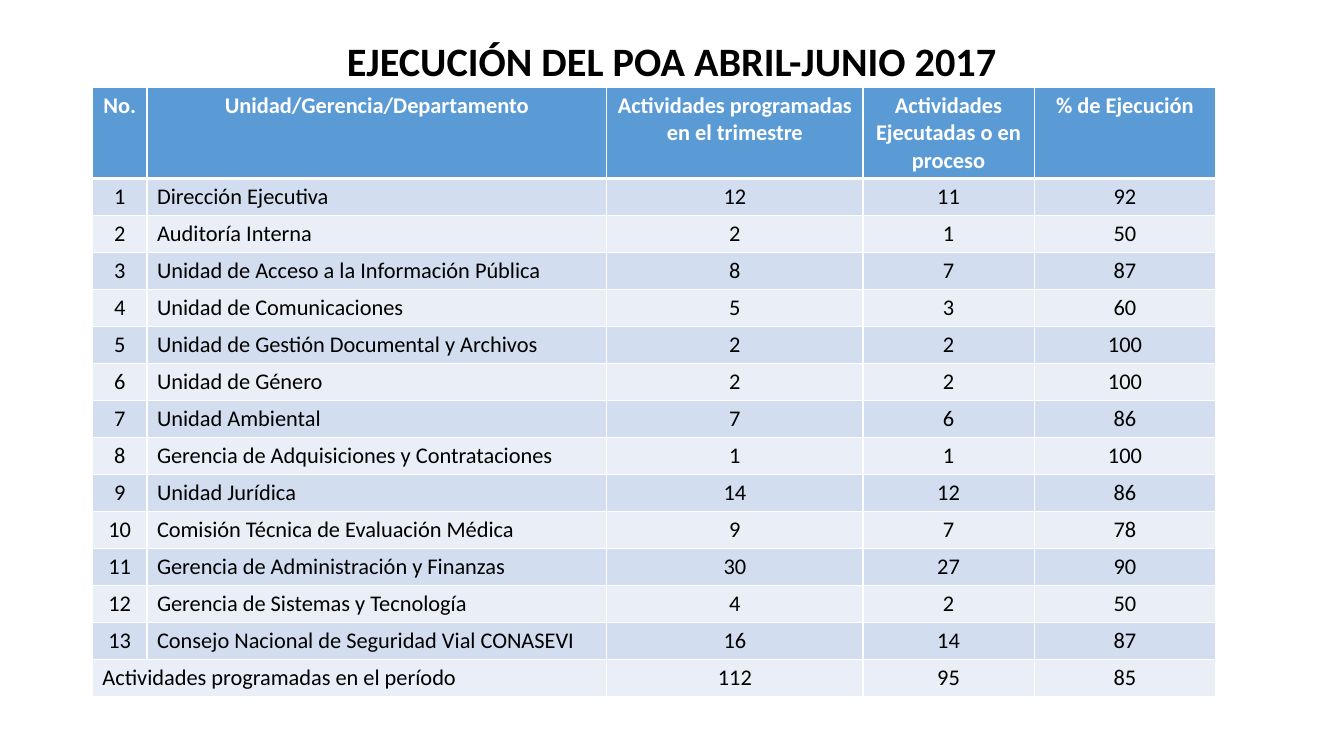
from lxml.etree import SubElement
from pptx import Presentation
from pptx.dml.color import RGBColor
from pptx.enum.text import MSO_ANCHOR, PP_ALIGN
from pptx.oxml.ns import qn
from pptx.util import Pt

PX = 9525
WHITE = RGBColor(0xFF, 0xFF, 0xFF)
BLACK = RGBColor(0x00, 0x00, 0x00)
HEADER_BLUE = RGBColor(0x5B, 0x9B, 0xD5)
BAND_DARK = RGBColor(0xD2, 0xDE, 0xEF)
BAND_LIGHT = RGBColor(0xEA, 0xEF, 0xF7)

TITLE = "EJECUCIÓN DEL POA ABRIL-JUNIO 2017"
HEADINGS = (
    "No.",
    "Unidad/Gerencia/Departamento",
    "Actividades programadas en el trimestre",
    "Actividades Ejecutadas o en proceso",
    "% de Ejecución",
)
UNITS = (
    ("Dirección Ejecutiva", 12, 11, 92),
    ("Auditoría Interna", 2, 1, 50),
    ("Unidad de Acceso a la Información Pública", 8, 7, 87),
    ("Unidad de Comunicaciones", 5, 3, 60),
    ("Unidad de Gestión Documental y Archivos", 2, 2, 100),
    ("Unidad de Género", 2, 2, 100),
    ("Unidad Ambiental", 7, 6, 86),
    ("Gerencia de Adquisiciones y Contrataciones", 1, 1, 100),
    ("Unidad Jurídica", 14, 12, 86),
    ("Comisión Técnica de Evaluación Médica", 9, 7, 78),
    ("Gerencia de Administración y Finanzas", 30, 27, 90),
    ("Gerencia de Sistemas y Tecnología", 4, 2, 50),
    ("Consejo Nacional de Seguridad Vial CONASEVI", 16, 14, 87),
)
TOTALS = ("Actividades programadas en el período", None, 112, 95, 85)
COLUMN_WIDTHS = (52, 438, 244, 163, 173)
HEADER_HEIGHT, ROW_HEIGHT = 87, 35


def write_text(frame, text, size=16, color=BLACK, bold=False,
               align=PP_ALIGN.CENTER, line_spacing=None):
    """Write one formatted paragraph into a text frame."""
    frame.word_wrap = True
    para = frame.paragraphs[0]
    para.alignment = align
    para.line_spacing = line_spacing
    span = para.add_run()
    span.text = text
    span.font.name = "Calibri"
    span.font.size = Pt(size)
    span.font.bold = bold
    span.font.color.rgb = color


def set_borders(cell, bottom=1, top=1):
    """Give a cell white borders of the given widths in points."""
    properties = cell._tc.get_or_add_tcPr()
    widths = {"a:lnL": 1, "a:lnR": 1, "a:lnT": top, "a:lnB": bottom}
    for tag, width in widths.items():
        line = SubElement(properties, qn(tag), w=str(Pt(width)))
        fill = SubElement(line, qn("a:solidFill"))
        SubElement(fill, qn("a:srgbClr"), val=str(WHITE))


def add_title(page, left, top, width, height):
    """Add the centred slide title."""
    box = page.shapes.add_textbox(left * PX, top * PX, width * PX, height * PX)
    box.text_frame.vertical_anchor = MSO_ANCHOR.MIDDLE
    write_text(box.text_frame, TITLE, size=28.8, bold=True, line_spacing=0.9)


def add_execution_table(page, left, top):
    """Add the table of activities per unit with its totals row."""
    rows = [HEADINGS]
    rows += [(number, *unit) for number, unit in enumerate(UNITS, 1)]
    rows.append(TOTALS)
    width = sum(COLUMN_WIDTHS)
    height = HEADER_HEIGHT + ROW_HEIGHT * (len(rows) - 1)
    table = page.shapes.add_table(
        len(rows), len(COLUMN_WIDTHS),
        left * PX, top * PX, width * PX, height * PX).table
    for column, column_width in zip(table.columns, COLUMN_WIDTHS):
        column.width = column_width * PX

    for row_index, values in enumerate(rows):
        is_header = row_index == 0
        table.rows[row_index].height = (HEADER_HEIGHT if is_header else ROW_HEIGHT) * PX
        band = BAND_DARK if row_index % 2 else BAND_LIGHT
        for column_index, value in enumerate(values):
            cell = table.cell(row_index, column_index)
            set_borders(cell, bottom=3 if is_header else 1,
                        top=3 if row_index == 1 else 1)
            cell.fill.solid()
            cell.fill.fore_color.rgb = HEADER_BLUE if is_header else band
            if value is None:
                continue
            is_name = not is_header and isinstance(value, str)
            write_text(cell.text_frame, str(value), bold=is_header,
                       color=WHITE if is_header else BLACK,
                       align=PP_ALIGN.LEFT if is_name else PP_ALIGN.CENTER)

    last = len(rows) - 1
    table.cell(last, 0).merge(table.cell(last, 1))


def main():
    """Build the deck and save it."""
    deck = Presentation()
    deck.slide_width, deck.slide_height = 1280 * PX, 720 * PX
    page = deck.slides.add_slide(deck.slide_layouts[6])
    add_title(page, 88, 38, 1104, 44)
    add_execution_table(page, 88, 83)
    deck.save("out.pptx")


if __name__ == "__main__":
    main()
